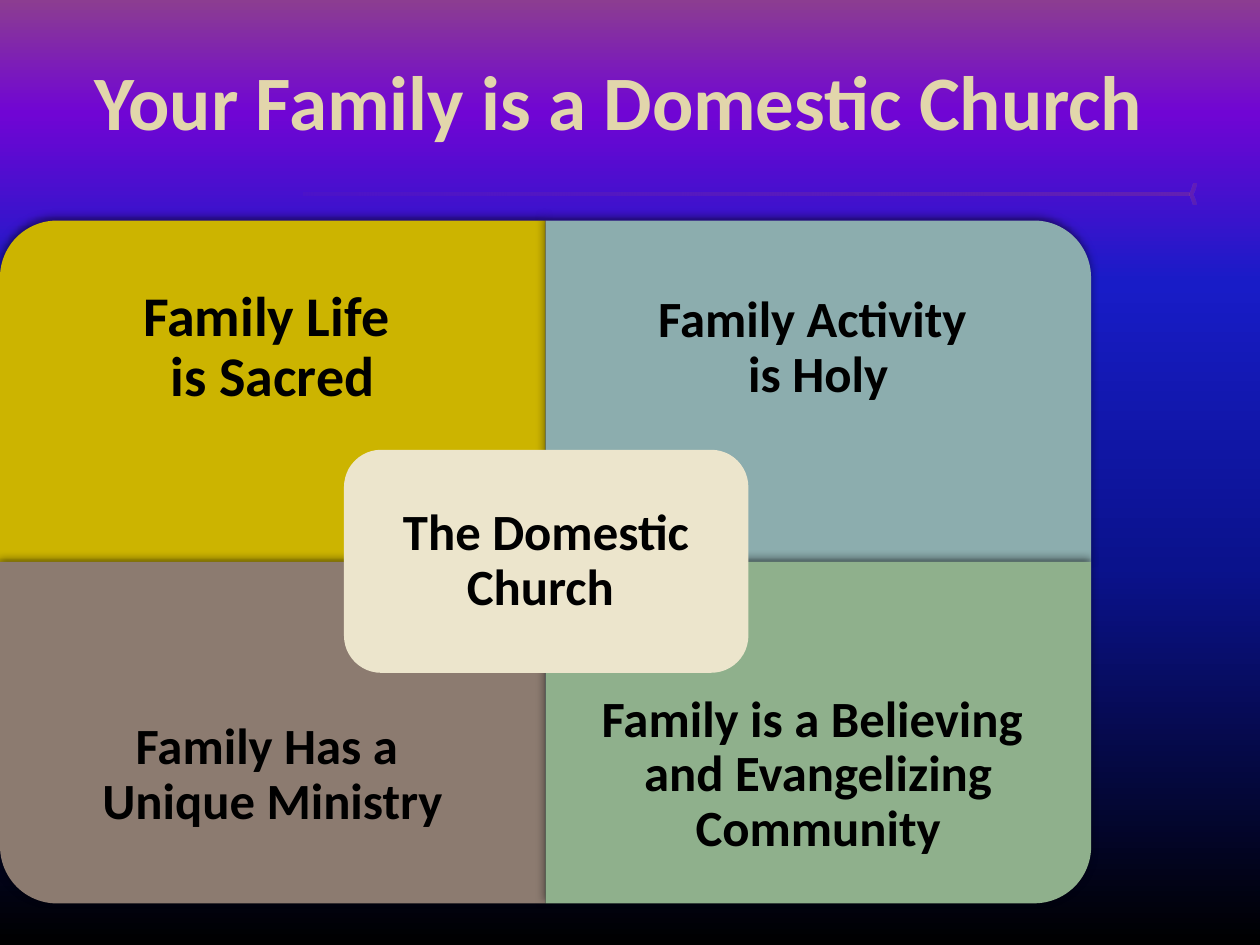
from lxml import etree
from pptx import Presentation
from pptx.dml.color import RGBColor
from pptx.enum.shapes import MSO_SHAPE as Shape
from pptx.enum.text import MSO_ANCHOR as Anchor, PP_ALIGN as Align
from pptx.oxml import parse_xml
from pptx.oxml.ns import nsdecls, qn
from pptx.util import Inches, Pt


def shade(fill, root, stops, angle):
    """Fill with a gradient of (position, colour, opacity) stops, in percent."""
    fill.solid()
    old = next(root.iter(qn("a:solidFill")))
    marks = "".join(
        f'<a:gs pos="{pos * 1000}"><a:srgbClr val="{hue}">'
        f'<a:alpha val="{alpha * 1000}"/></a:srgbClr></a:gs>'
        for pos, hue, alpha in stops)
    new = parse_xml(f'<a:gradFill {nsdecls("a")} rotWithShape="1"><a:gsLst>{marks}</a:gsLst>'
                    f'<a:lin ang="{angle * 60000}" scaled="0"/></a:gradFill>')
    old.getparent().replace(old, new)


def write(frame, lines, size, color, space=None):
    frame.word_wrap = True
    frame.vertical_anchor = Anchor.MIDDLE
    para = frame.paragraphs[0]
    para.alignment = Align.CENTER
    para.line_spacing = space
    for i, line in enumerate(lines):
        if i:
            para.add_line_break()
        run = para.add_run()
        run.text = line
        run.font.name = "Calibri"
        run.font.size = Pt(size)
        run.font.bold = True
        run.font.color.rgb = RGBColor.from_string(color)


prs = Presentation()
prs.slide_width, prs.slide_height = Inches(10), Inches(7.5)
slide = prs.slides.add_slide(prs.slide_layouts[5])
shapes = slide.shapes

sky = [(0, "8C3D91", 100), (12, "7005D4", 100), (30, "181CC7", 100),
       (60, "0A128C", 100), (100, "000000", 100)]
shade(slide.background.fill, slide.element, sky, 90)

# Fading rule under the title
for kind, left, top, width, height, fade in [
        (Shape.CHEVRON, 9.44, 1.46, 0.06, 0.16, 15),
        (Shape.RECTANGLE, 2.41, 1.53, 7.03, 0.02, 4)]:
    part = shapes.add_shape(kind, Inches(left), Inches(top), Inches(width), Inches(height))
    part.shadow.inherit = False
    part.line.fill.background()
    shade(part.fill, part.element.spPr, [(0, "D16349", 20), (100, "D16349", fade)], 180)
    if kind == Shape.CHEVRON:
        part.element.spPr.xfrm.set("flipH", "1")

title = shapes.title
title.left, title.top = Inches(-0.03), Inches(0.17)
title.width, title.height = Inches(10.03), Inches(1.25)
write(title.text_frame, ["Your Family is a Domestic Church "], 44, "E2D6AB")

# Four quarters, each with its round corner turned outwards
wide, high, band, first = 4.33, 2.71, 2.03, 1.75
quarters = [
    (0, 0, 270, "CCB400", 32, 0.25, ["Family Life ", "is Sacred"]),
    (1, 0, 0, "8CADAE", 29, 0.23, ["Family Activity ", "is Holy"]),
    (0, 1, 180, "8C7B70", 29, 0.23, ["Family Has a ", "Unique Ministry"]),
    (1, 1, 90, "8FB08C", 29, 0.23, ["Family is a Believing ", "and Evangelizing Community"]),
]
for col, row, turn, color, size, inset, lines in quarters:
    left, top = col * wide, first + row * high
    w, h = (high, wide) if turn % 180 else (wide, high)
    tile = shapes.add_shape(Shape.ROUND_1_RECTANGLE, Inches(left + (wide - w) / 2),
                            Inches(top + (high - h) / 2), Inches(w), Inches(h))
    tile.rotation = turn
    tile.fill.solid()
    tile.fill.fore_color.rgb = RGBColor.from_string(color)
    tile.line.fill.background()
    tile.shadow.inherit = False
    glow = etree.SubElement(tile.element.spPr.find(qn("a:effectLst")), qn("a:outerShdw"),
                            blurRad=str(Pt(5)), dist=str(Pt(2)),
                            dir=str(245 * 60000), rotWithShape="0")
    black = etree.SubElement(glow, qn("a:srgbClr"), val="000000")
    etree.SubElement(black, qn("a:alpha"), val="50000")

    label = shapes.add_textbox(Inches(left), Inches(top + row * (high - band)),
                               Inches(wide), Inches(band))
    frame = label.text_frame
    frame.margin_left = frame.margin_right = Inches(inset)
    frame.margin_top = frame.margin_bottom = Inches(inset)
    write(frame, lines, size, "000000", 0.9)

hub = shapes.add_shape(Shape.ROUNDED_RECTANGLE, Inches(2.73), Inches(3.57),
                       Inches(3.21), Inches(1.77))
hub.shadow.inherit = False
hub.fill.solid()
hub.fill.fore_color.rgb = RGBColor.from_string("ECE5CC")
hub.line.fill.background()
frame = hub.text_frame
frame.margin_left = frame.margin_right = Inches(0.12)
frame.margin_top = frame.margin_bottom = Inches(0.12)
write(frame, ["The Domestic Church "], 29, "000000", 0.9)

prs.save("out.pptx")
